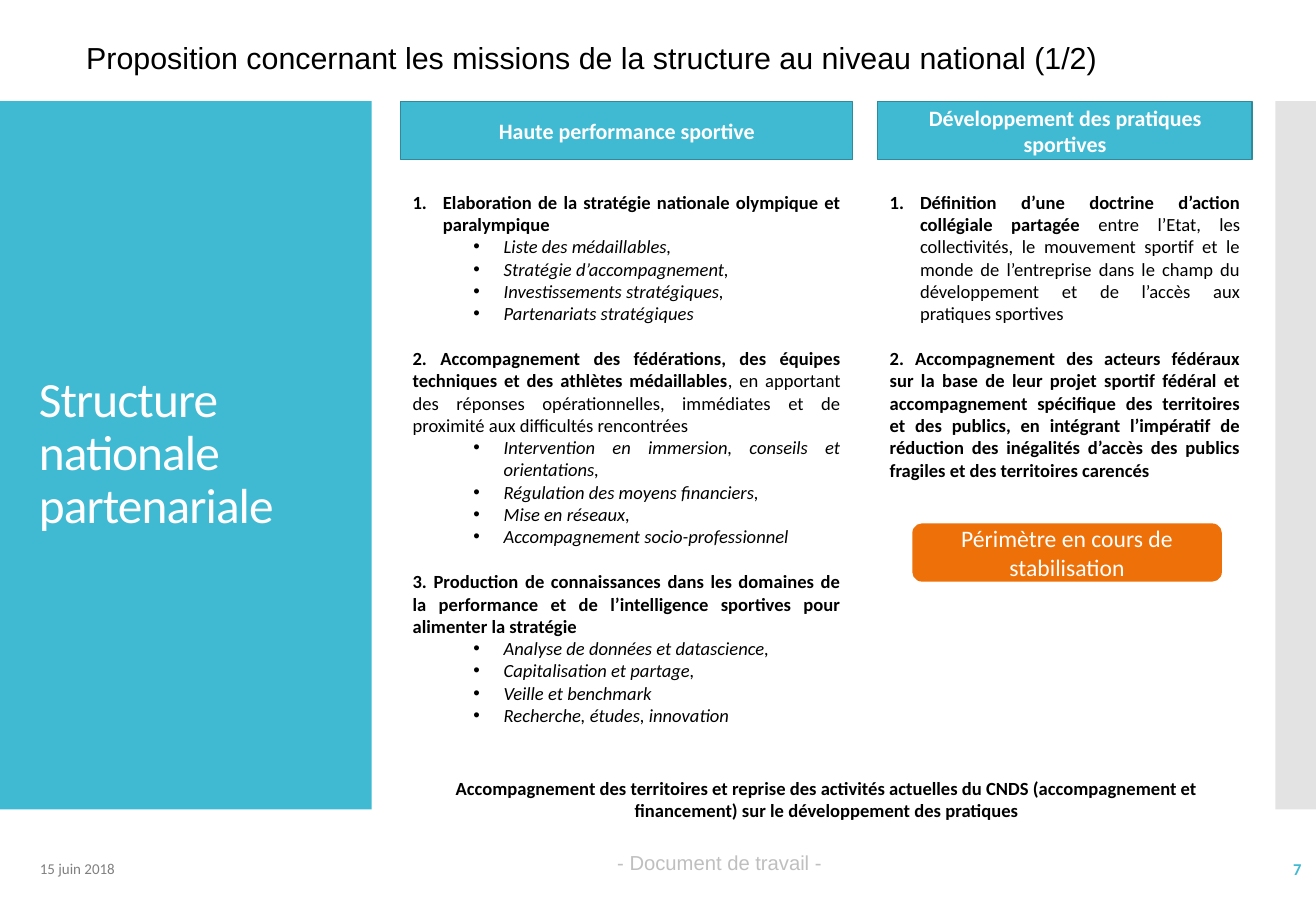
import pptx
import pptx.dml.color
import pptx.enum.shapes
import pptx.enum.text
import pptx.oxml.ns
import pptx.util
from lxml import etree

Pt = pptx.util.Pt
ALIGN = pptx.enum.text.PP_ALIGN
ANCHOR = pptx.enum.text.MSO_ANCHOR
SHAPE = pptx.enum.shapes.MSO_SHAPE

# Content
TITLE = "Proposition concernant les missions de la structure au niveau national (1/2)"
PANEL_TITLE = "Structure nationale partenariale"
CALLOUT = "Périmètre en cours de stabilisation"
CONCLUSION = ("Accompagnement des territoires et reprise des activités actuelles du CNDS "
              "(accompagnement et financement) sur le développement des pratiques")
FOOTER, DATE, NUMBER = "- Document de travail -", "15 juin 2018", "7"

# Each mission: (numbered by list, bold text, plain text, bullets)
PERFORMANCE = [
    (True, "Elaboration de la stratégie nationale olympique et paralympique", "",
     ["Liste des médaillables,", "Stratégie d’accompagnement,",
      "Investissements stratégiques,", "Partenariats stratégiques"]),
    (False, "2. Accompagnement des fédérations, des équipes techniques et des athlètes médaillables",
     ", en apportant des réponses opérationnelles, immédiates et de proximité "
     "aux difficultés rencontrées",
     ["Intervention en immersion, conseils et orientations,", "Régulation des moyens financiers,",
      "Mise en réseaux,", "Accompagnement socio-professionnel"]),
    (False, "3. Production de connaissances dans les domaines de la performance et de "
     "l’intelligence sportives pour alimenter la stratégie", "",
     ["Analyse de données et datascience,", "Capitalisation et partage,",
      "Veille et benchmark", "Recherche, études, innovation"]),
]
DEVELOPMENT = [
    (True, "Définition d’une doctrine d’action collégiale partagée ",
     "entre l’Etat, les collectivités, le mouvement sportif et le monde de l’entreprise dans "
     "le champ du développement et de l’accès aux pratiques sportives", []),
    (False, "2. Accompagnement des acteurs fédéraux sur la base de leur projet sportif fédéral et "
     "accompagnement spécifique des territoires et des publics, en intégrant l’impératif de "
     "réduction des inégalités d’accès des publics fragiles et des territoires carencés", "", []),
]
# Each column: (heading, left, width, text height, missions)
COLUMNS = [
    ("Haute performance sportive", 237.5, 268, 327, PERFORMANCE),
    ("Développement des pratiques sportives", 520.25, 222, 207, DEVELOPMENT),
]

# Style
TEAL, TEAL_DARK, ORANGE, GREY = "40BAD2", "2F8A9B", "EE7008", "C8C8C8"
WHITE, BLACK = "FFFFFF", "000000"
BODY_SIZE, BLANK_LINE, INDENT = 11, 13.4, 18
BAND_TOP, BAND_HEIGHT = 60, 419.75
HEADING_TOP, HEADING_HEIGHT, MISSIONS_TOP = 60.25, 34.5, 109.5
FOOTER_TOP = 500.5

presentation = pptx.Presentation()
presentation.slide_width, presentation.slide_height = Pt(780), Pt(540)
slide = presentation.slides.add_slide(presentation.slide_layouts[6])


def color(hex_code):
    return pptx.dml.color.RGBColor.from_string(hex_code)


def style_run(run, size, hex_code, bold=False, italic=False, font="Calibri"):
    run.font.name, run.font.size = font, Pt(size)
    run.font.bold, run.font.italic = bold, italic
    run.font.color.rgb = color(hex_code)


def add_block(left, top, width, height, fill, line=None, kind=SHAPE.RECTANGLE):
    shape = slide.shapes.add_shape(kind, Pt(left), Pt(top), Pt(width), Pt(height))
    shape.shadow.inherit = False
    shape.fill.solid()
    shape.fill.fore_color.rgb = color(fill)
    if line:
        shape.line.color.rgb = color(line)
        shape.line.width = Pt(0.85)
    else:
        shape.line.fill.background()
    return shape


def add_box(left, top, width, height):
    box = slide.shapes.add_textbox(Pt(left), Pt(top), Pt(width), Pt(height))
    box.text_frame.word_wrap = True
    return box


def write(shape, text, size, hex_code, align=ALIGN.LEFT, anchor=ANCHOR.MIDDLE, **style):
    frame = shape.text_frame
    frame.text = text
    frame.vertical_anchor = anchor
    paragraph = frame.paragraphs[0]
    paragraph.alignment = align
    style_run(paragraph.runs[0], size, hex_code, **style)
    return paragraph


def add_marker(paragraph, left, tag, **attributes):
    properties = paragraph._p.get_or_add_pPr()
    properties.set("marL", str(Pt(left)))
    properties.set("indent", str(-Pt(INDENT)))
    font = etree.SubElement(properties, pptx.oxml.ns.qn("a:buFont"))
    font.set("typeface", "Arial" if tag == "a:buChar" else "+mj-lt")
    etree.SubElement(properties, pptx.oxml.ns.qn(tag), attributes)


def write_missions(frame, missions):
    def next_paragraph(*runs):
        paragraph = frame.add_paragraph() if frame.text else frame.paragraphs[0]
        paragraph.alignment = ALIGN.JUSTIFY
        for text, style in runs:
            if text:
                run = paragraph.add_run()
                run.text = text
                style_run(run, BODY_SIZE, BLACK, **style)
        return paragraph

    for index, (numbered, bold_text, plain_text, bullets) in enumerate(missions):
        paragraph = next_paragraph((bold_text, {"bold": True}), (plain_text, {}))
        if index:
            paragraph.space_before = Pt(BLANK_LINE)
        if numbered:
            add_marker(paragraph, INDENT, "a:buAutoNum", type="arabicPeriod")
        for bullet in bullets:
            paragraph = next_paragraph((bullet, {"italic": True}))
            paragraph.level = 1
            add_marker(paragraph, 3 * INDENT, "a:buChar", char="•")


# Side panels
add_block(0, BAND_TOP, 220.25, BAND_HEIGHT, TEAL)
side_band = add_block(756, BAND_TOP, 24, BAND_HEIGHT, GREY)
band_color = side_band.fill._xPr.find(".//" + pptx.oxml.ns.qn("a:srgbClr"))
etree.SubElement(band_color, pptx.oxml.ns.qn("a:alpha"), val="50000")

panel_title = write(add_box(16, 88.5, 188.5, 362), PANEL_TITLE, 29.2, WHITE)
panel_title.line_spacing = 0.9
panel_title.runs[0].font._element.set("spc", "-50")

# Columns
for heading, left, width, height, missions in COLUMNS:
    header = add_block(left, HEADING_TOP, width, HEADING_HEIGHT, TEAL, TEAL_DARK)
    write(header, heading, 13, WHITE, ALIGN.CENTER, bold=True)
    write_missions(add_box(left, MISSIONS_TOP, width, height).text_frame, missions)

# Callout and conclusion
callout = add_block(540.75, 310.25, 183.5, HEADING_HEIGHT, ORANGE, kind=SHAPE.ROUNDED_RECTANGLE)
write(callout, CALLOUT, 14, WHITE, ALIGN.CENTER)
write(add_box(244, 457, 492, 34), CONCLUSION, BODY_SIZE, BLACK, ALIGN.CENTER, ANCHOR.TOP, bold=True)

# Title and footer
write(add_box(44, 19.5, 697, 29), TITLE, 18, BLACK, anchor=ANCHOR.TOP, font="Arial")
write(add_box(265, FOOTER_TOP, 323, 22), FOOTER, 12, "BFBFBF", ALIGN.CENTER, ANCHOR.TOP, font="Arial")
write(add_box(16.5, FOOTER_TOP, 176, 29), DATE, 8.9, "808080")
write(add_box(680.5, FOOTER_TOP, 98, 29), NUMBER, 9.8, TEAL, ALIGN.RIGHT, bold=True)

presentation.save("out.pptx")
